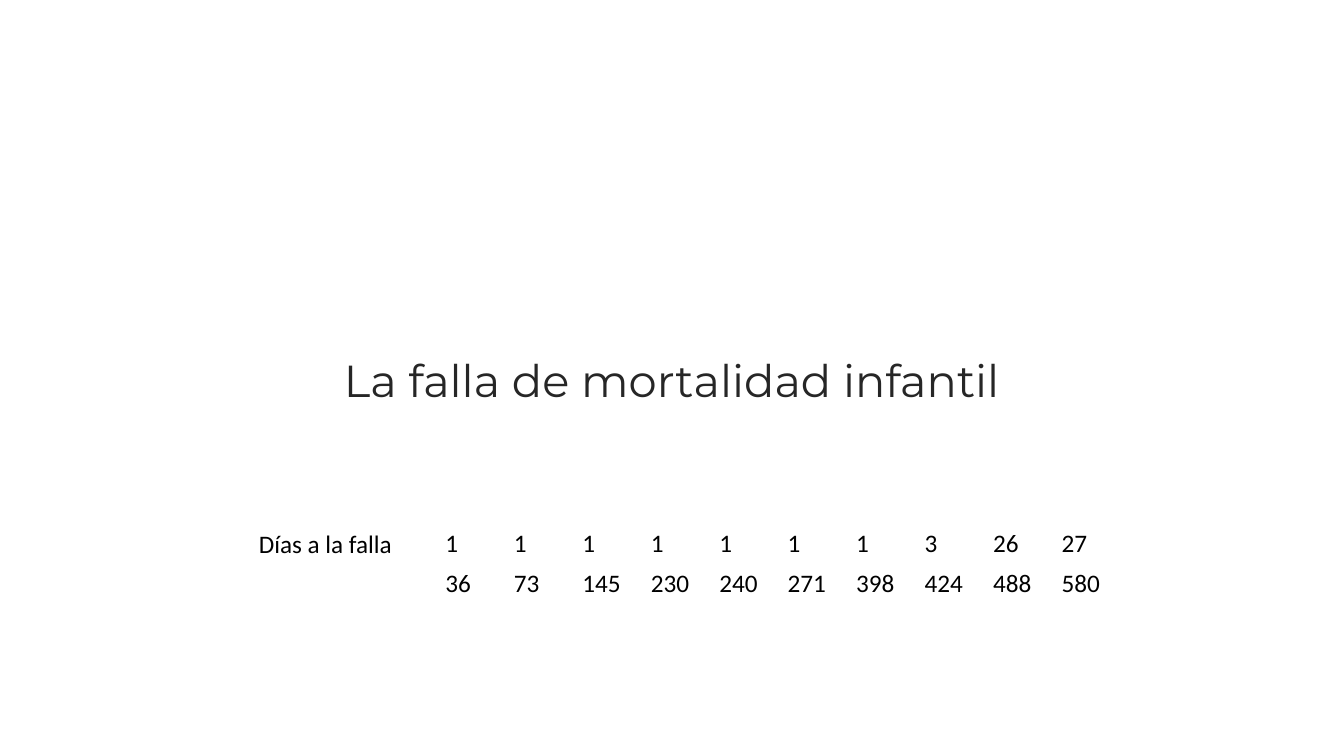
from pptx import Presentation
from pptx.dml.color import RGBColor
from pptx.enum.text import MSO_ANCHOR, MSO_AUTO_SIZE, PP_ALIGN
from pptx.util import Pt

COLORS = {"title": "262626", "text": "000000"}
FAILURE_DAYS = [
    [1, 1, 1, 1, 1, 1, 1, 3, 26, 27],
    [36, 73, 145, 230, 240, 271, 398, 424, 488, 580],
]
COLUMN_WIDTH = 48.9
ROW_HEIGHT = 28.8
TABLE_TOP = 373.7


def add_text(paragraph, text, font_name, size, color):
    run = paragraph.add_run()
    run.text = text
    run.font.name = font_name
    run.font.size = Pt(size)
    run.font.bold = False
    run.font.color.rgb = RGBColor.from_string(COLORS[color])


presentation = Presentation()
presentation.slide_width = Pt(960)
presentation.slide_height = Pt(540)
slide = presentation.slides.add_slide(presentation.slide_layouts[6])

title = slide.shapes.add_textbox(Pt(120), Pt(144), Pt(720), Pt(150.5))
title.text_frame.word_wrap = True
title.text_frame.vertical_anchor = MSO_ANCHOR.BOTTOM
title_paragraph = title.text_frame.paragraphs[0]
title_paragraph.alignment = PP_ALIGN.CENTER
title_paragraph.line_spacing = 0.9
add_text(title_paragraph, "La falla de mortalidad infantil", "Montserrat", 32, "title")

row_count, column_count = len(FAILURE_DAYS), len(FAILURE_DAYS[0])
table = slide.shapes.add_table(
    row_count, column_count, Pt(311), Pt(TABLE_TOP),
    Pt(COLUMN_WIDTH * column_count), Pt(ROW_HEIGHT * row_count),
).table
table.first_row = False
table.horz_banding = False
for column in table.columns:
    column.width = Pt(COLUMN_WIDTH)
for row, days in zip(table.rows, FAILURE_DAYS):
    row.height = Pt(ROW_HEIGHT)
    for cell, day in zip(row.cells, days):
        cell.fill.background()
        add_text(cell.text_frame.paragraphs[0], str(day), "Calibri", 18, "text")

label = slide.shapes.add_textbox(Pt(177.8), Pt(TABLE_TOP), Pt(110.9), Pt(29.1))
label.text_frame.word_wrap = False
label.text_frame.auto_size = MSO_AUTO_SIZE.SHAPE_TO_FIT_TEXT
add_text(label.text_frame.paragraphs[0], "Días a la falla", "Calibri", 18, "text")

presentation.save("out.pptx")
